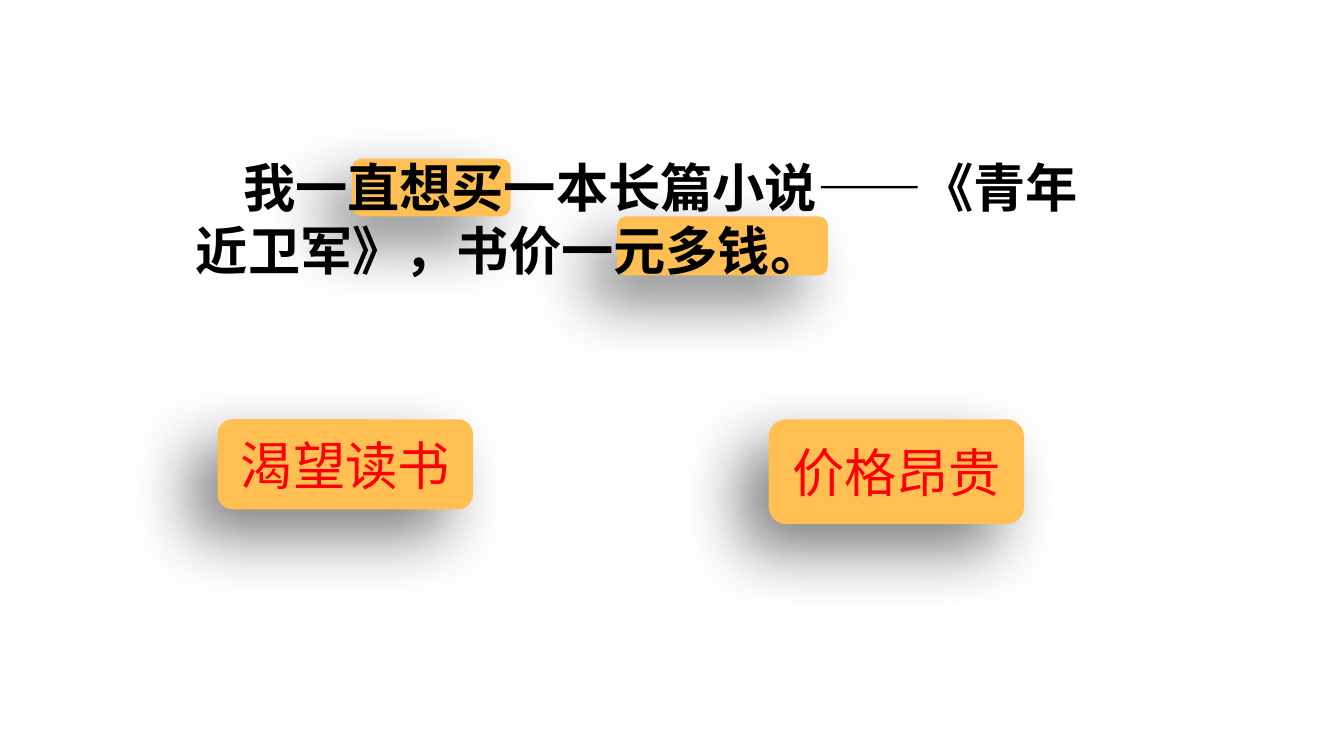
import lxml.etree
import pptx
import pptx.dml.color
import pptx.enum.shapes
import pptx.enum.text
import pptx.oxml.ns
import pptx.util
from pptx.util import Inches

TYPEFACE = "Noto Sans CJK SC"
AMBER = "FFBF53"
RED = "FF0000"
BLACK = "000000"


def colour(value):
    return pptx.dml.color.RGBColor.from_string(value)


def add_child(parent, tag, **attributes):
    return lxml.etree.SubElement(parent, pptx.oxml.ns.qn(tag), attributes)


def style_paragraph(paragraph, shade, bold=False):
    font = paragraph.font
    font.size = pptx.util.Pt(28)
    font.name = TYPEFACE
    font.bold = bold
    font.color.rgb = colour(shade)
    properties = paragraph._p.find(".//" + pptx.oxml.ns.qn("a:defRPr"))
    add_child(properties, "a:ea", typeface=TYPEFACE)


def cast_shadow(shape):
    shape.shadow.inherit = False
    effects = shape._element.spPr.find(pptx.oxml.ns.qn("a:effectLst"))
    shadow = add_child(
        effects, "a:outerShdw",
        blurRad=str(pptx.util.Pt(35)), dist=str(pptx.util.Pt(20)),
        dir=str(135 * 60000), algn="tr", rotWithShape="0",
    )
    black = add_child(shadow, "a:srgbClr", val=BLACK)
    add_child(black, "a:alpha", val="50000")


def add_card(slide, left, top, width, height, label=None):
    card = slide.shapes.add_shape(
        pptx.enum.shapes.MSO_SHAPE.ROUNDED_RECTANGLE,
        Inches(left), Inches(top), Inches(width), Inches(height),
    )
    card.fill.solid()
    card.fill.fore_color.rgb = colour(AMBER)
    card.line.fill.background()
    cast_shadow(card)
    if label:
        frame = card.text_frame
        frame.vertical_anchor = pptx.enum.text.MSO_ANCHOR.MIDDLE
        paragraph = frame.paragraphs[0]
        paragraph.text = label
        paragraph.alignment = pptx.enum.text.PP_ALIGN.CENTER
        style_paragraph(paragraph, RED)


def add_quotation(slide, left, top, width, height):
    add_card(slide, left + 1.26, top + 0.07, 1.18, 0.43)
    add_card(slide, left + 3.23, top + 0.5, 1.57, 0.44)
    quotation = slide.shapes.add_textbox(
        Inches(left), Inches(top), Inches(width), Inches(height)
    )
    frame = quotation.text_frame
    frame.word_wrap = True
    frame.auto_size = pptx.enum.text.MSO_AUTO_SIZE.SHAPE_TO_FIT_TEXT
    sentence = frame.paragraphs[0]
    sentence.text = "我一直想买一本长篇小说——《青年近卫军》，书价一元多钱。"
    indents = sentence._p.get_or_add_pPr()
    indents.set("marL", "0")
    indents.set("indent", str(Inches(0.35)))
    style_paragraph(sentence, BLACK, bold=True)


def add_meanings(slide, left, top, width):
    card_width = 1.9
    add_card(slide, left, top, card_width, 0.67, "渴望读书")
    add_card(slide, left + width - card_width, top, card_width, 0.78, "价格昂贵")


def main():
    presentation = pptx.Presentation()
    presentation.slide_width = Inches(10)
    presentation.slide_height = Inches(10 * 9 / 16)
    slide = presentation.slides.add_slide(presentation.slide_layouts[6])
    add_quotation(slide, 1.36, 1.11, 6.88, 1.04)
    add_meanings(slide, 1.62, 3.12, 6)
    presentation.save("out.pptx")


if __name__ == "__main__":
    main()
